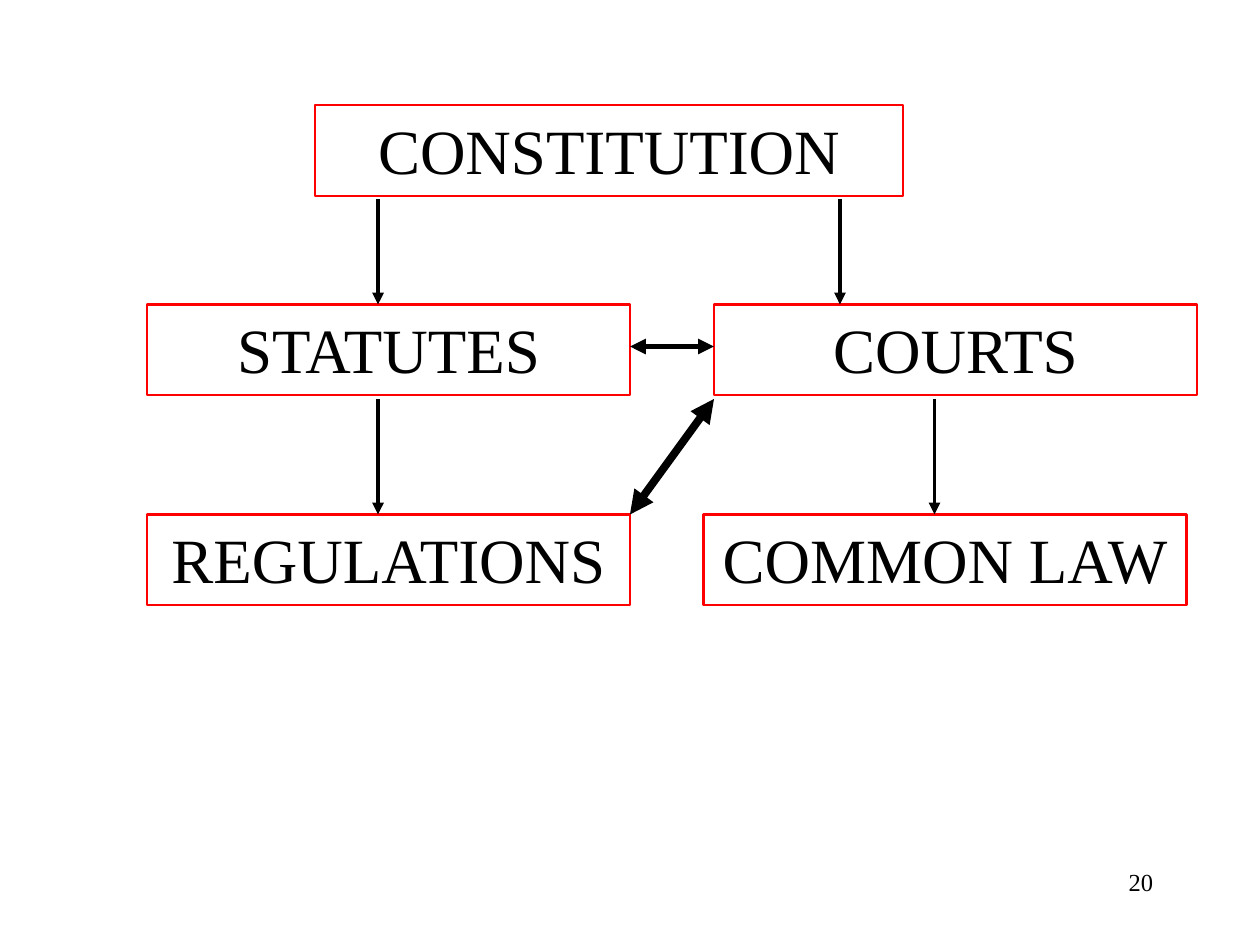
import pptx
import pptx.dml.color
import pptx.enum.shapes
import pptx.enum.text
import pptx.oxml.ns
import pptx.util
import lxml.etree

Pt = pptx.util.Pt
ALIGN = pptx.enum.text.PP_ALIGN
COLOURS = {"text": "000000", "arrow": "000000", "border": "FF0000"}
FONT = "Times New Roman"
BOX_HEIGHT = 52
WIDE, NARROW = 336, 276
ROWS = {"top": 60, "middle": 174, "bottom": 294}
BELOW = {"top": 114, "middle": 228}  # where arrows leave each row

# Boxes: text, left, row, width
BOXES = [
    ("CONSTITUTION", 180, "top", WIDE),
    ("STATUTES", 84, "middle", NARROW),
    ("REGULATIONS", 84, "bottom", NARROW),
    ("COURTS", 408, "middle", NARROW),
    ("COMMON LAW", 402, "bottom", NARROW),
]

# Arrows: start, end, line width, heads at both ends
ARROWS = [
    ((216, BELOW["top"]), (216, ROWS["middle"]), 2.25, False),
    ((480, BELOW["top"]), (480, ROWS["middle"]), 2.25, False),
    ((216, BELOW["middle"]), (216, ROWS["bottom"]), 2.25, False),
    ((534, BELOW["middle"]), (534, ROWS["bottom"]), 2.25, False),
    ((360, 198), (408, 198), 3, True),
    ((360, ROWS["bottom"]), (408, BELOW["middle"]), 4.5, True),
]


def colour(name):
    return pptx.dml.color.RGBColor.from_string(COLOURS[name])


def write_text(shape, text, size, align):
    frame = shape.text_frame
    frame.word_wrap = True
    frame.vertical_anchor = pptx.enum.text.MSO_ANCHOR.TOP
    paragraph = frame.paragraphs[0]
    paragraph.alignment = align
    run = paragraph.add_run()
    run.text = text
    run.font.name = FONT
    run.font.size = Pt(size)
    run.font.color.rgb = colour("text")


def add_box(slide, text, left, row, width):
    shape = slide.shapes.add_shape(
        pptx.enum.shapes.MSO_SHAPE.RECTANGLE,
        Pt(left), Pt(ROWS[row]), Pt(width), Pt(BOX_HEIGHT))
    shape.shadow.inherit = False
    shape.fill.background()
    shape.line.color.rgb = colour("border")
    shape.line.width = Pt(1.25)
    write_text(shape, text, size=36, align=ALIGN.CENTER)


def add_arrow(slide, start, end, width, both_ends):
    connector = slide.shapes.add_connector(
        pptx.enum.shapes.MSO_CONNECTOR.STRAIGHT,
        *[Pt(value) for value in start + end])
    connector.line.color.rgb = colour("arrow")
    connector.line.width = Pt(width)
    qualified = pptx.oxml.ns.qn
    line = connector.line._get_or_add_ln()
    for tag in (["a:headEnd"] if both_ends else []) + ["a:tailEnd"]:
        lxml.etree.SubElement(line, qualified(tag), type="triangle")
    properties = connector._element.spPr
    lxml.etree.SubElement(properties, qualified("a:effectLst"))


def main():
    presentation = pptx.Presentation()
    presentation.slide_width, presentation.slide_height = Pt(720), Pt(540)
    slide = presentation.slides.add_slide(presentation.slide_layouts[6])

    # Hierarchy of law
    for box in BOXES:
        add_box(slide, *box)
    for arrow in ARROWS:
        add_arrow(slide, *arrow)

    # Slide number
    number = slide.shapes.add_textbox(Pt(516), Pt(492), Pt(150), Pt(36))
    write_text(number, "20", size=14, align=ALIGN.RIGHT)

    presentation.save("out.pptx")


if __name__ == "__main__":
    main()
